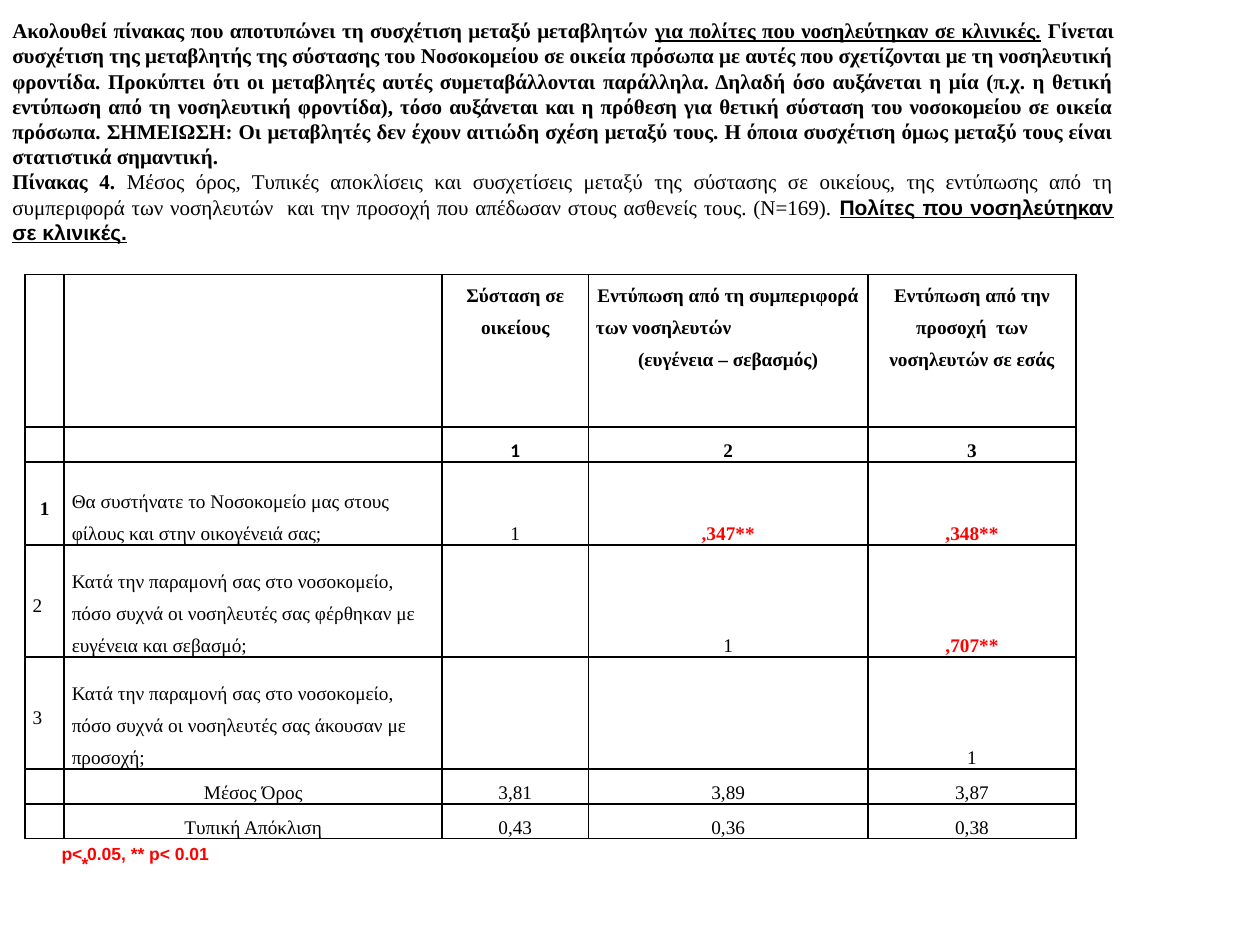
from lxml import etree
from pptx import Presentation
from pptx.dml.color import RGBColor
from pptx.enum.text import MSO_ANCHOR as Anchor, MSO_AUTO_SIZE as AutoSize, PP_ALIGN as Align
from pptx.oxml.ns import qn
from pptx.util import Inches, Pt

SERIF = "Times New Roman"
SANS = "Arial"
BLACK = "000000"
RED = "FF0000"


def colour(value):
    return RGBColor.from_string(value)


class CorrelationSlide:
    table_size = 11
    cell_inset = 0.06
    line_spacing = 1.5

    def __init__(self, presentation):
        self.slide = presentation.slides.add_slide(presentation.slide_layouts[6])

    def format_run(self, run, size, font=SERIF, fill=BLACK, bold=False, underline=False):
        run.font.size = Pt(size)
        run.font.name = font
        run.font.bold = bold
        run.font.underline = underline
        run.font.color.rgb = colour(fill)

    def text(self, left, top, width, height, paragraphs, size, align=Align.LEFT,
             anchor=Anchor.TOP, wrap=True):
        box = self.slide.shapes.add_textbox(Inches(left), Inches(top), Inches(width), Inches(height))
        frame = box.text_frame
        frame.word_wrap = wrap
        frame.auto_size = AutoSize.SHAPE_TO_FIT_TEXT
        frame.vertical_anchor = anchor
        for index, runs in enumerate(paragraphs):
            paragraph = frame.add_paragraph() if index else frame.paragraphs[0]
            paragraph.alignment = align
            for content, style in runs:
                run = paragraph.add_run()
                run.text = content
                self.format_run(run, size, **style)

    def border(self, cell):
        properties = cell._tc.get_or_add_tcPr()
        for side in ("a:lnL", "a:lnR", "a:lnT", "a:lnB"):
            line = etree.SubElement(properties, qn(side), w=str(Pt(1)))
            fill = etree.SubElement(line, qn("a:solidFill"))
            etree.SubElement(fill, qn("a:srgbClr"), val=BLACK)

    def cell(self, cell, content, align, anchor, **style):
        self.border(cell)
        cell.fill.background()
        cell.margin_left = cell.margin_right = Inches(self.cell_inset)
        cell.margin_top = cell.margin_bottom = 0
        cell.vertical_anchor = anchor
        cell.text_frame.text = content
        for paragraph in cell.text_frame.paragraphs:
            paragraph.alignment = align
            if not content:
                etree.SubElement(paragraph._p, qn("a:endParaRPr"), sz=str(self.table_size * 100))
                continue
            paragraph.line_spacing = self.line_spacing
            for run in paragraph.runs:
                self.format_run(run, self.table_size, **style)

    def table(self, left, top, widths, heights, rows):
        frame = self.slide.shapes.add_table(
            len(rows), len(widths), Inches(left), Inches(top),
            Inches(sum(widths)), Inches(sum(heights)))
        table = frame.table
        table.first_row = table.horz_banding = False
        for column, width in zip(table.columns, widths):
            column.width = Inches(width)
        for row, height in zip(table.rows, heights):
            row.height = Inches(height)
        for row_index, row in enumerate(rows):
            for column_index, content in enumerate(row):
                significant = content.endswith("**")
                question = column_index == 1 and content.endswith(";")
                row_number = column_index == 0
                plain_number = row_number and row_index > 2
                anchor = Anchor.TOP if row_index == 0 else Anchor.MIDDLE if row_number else Anchor.BOTTOM
                self.cell(
                    table.cell(row_index, column_index), content,
                    Align.LEFT if question or plain_number else Align.CENTER, anchor,
                    font="Calibri" if (row_index, column_index) == (1, 2) else SERIF,
                    fill=RED if significant else BLACK,
                    bold=significant or row_index < 2 or (row_number and not plain_number))
        return table


def main():
    presentation = Presentation()
    presentation.slide_width = Inches(10)
    presentation.slide_height = Inches(7.5)
    page = CorrelationSlide(presentation)

    bold = {"bold": True}
    introduction = [
        ("Ακολουθεί πίνακας που αποτυπώνει τη συσχέτιση μεταξύ μεταβλητών ", bold),
        ("για πολίτες που νοσηλεύτηκαν σε κλινικές.", {"bold": True, "underline": True}),
        (" Γίνεται συσχέτιση της μεταβλητής της σύστασης του Νοσοκομείου σε οικεία πρόσωπα "
         "με αυτές που σχετίζονται με τη νοσηλευτική φροντίδα. Προκύπτει ότι οι μεταβλητές "
         "αυτές συμεταβάλλονται παράλληλα. Δηλαδή όσο αυξάνεται η μία (π.χ. η θετική εντύπωση "
         "από τη νοσηλευτική φροντίδα), τόσο αυξάνεται και η πρόθεση για θετική σύσταση του "
         "νοσοκομείου σε οικεία πρόσωπα. ΣΗΜΕΙΩΣΗ: Οι μεταβλητές δεν έχουν αιτιώδη σχέση "
         "μεταξύ τους. Η όποια συσχέτιση όμως μεταξύ τους είναι στατιστικά σημαντική.", bold),
    ]
    caption = [
        ("Πίνακας 4. ", bold),
        ("Μέσος όρος, Τυπικές αποκλίσεις και συσχετίσεις μεταξύ της σύστασης σε οικείους, "
         "της εντύπωσης από τη συμπεριφορά των νοσηλευτών  και την προσοχή που απέδωσαν "
         "στους ασθενείς τους. (N=169). ", {}),
        ("Πολίτες που νοσηλεύτηκαν σε κλινικές.", {"font": SANS, "bold": True, "underline": True}),
    ]
    page.text(0, 0.08, 8.94, 1.92, [introduction, caption], 12, Align.JUSTIFY, Anchor.MIDDLE)

    stay = "Κατά την παραμονή σας στο νοσοκομείο, πόσο συχνά οι νοσηλευτές σας "
    rows = [
        ["", "", "Σύσταση σε οικείους",
         "Εντύπωση από τη συμπεριφορά\nτων νοσηλευτών\n(ευγένεια – σεβασμός)",
         "Εντύπωση από την προσοχή  των νοσηλευτών σε εσάς"],
        ["", "", "1", "2", "3"],
        ["1", "Θα συστήνατε το Νοσοκομείο μας στους φίλους και στην οικογένειά σας;",
         "1", ",347**", ",348**"],
        ["2", stay + "φέρθηκαν με ευγένεια και σεβασμό;", "", "1", ",707**"],
        ["3", stay + "άκουσαν με προσοχή;", "", "", "1"],
        ["", "Μέσος Όρος", "3,81", "3,89", "3,87"],
        ["", "Τυπική Απόκλιση", "0,43", "0,36", "0,38"],
    ]
    table = page.table(0.2, 2.18, [0.31, 3, 1.16, 2.22, 1.65],
                       [1.21, 0.25, 0.66, 0.89, 0.89, 0.25, 0.25], rows)
    table.cell(0, 3).text_frame.paragraphs[1].alignment = Align.LEFT

    note = {"font": SANS, "fill": RED, "bold": True}
    page.text(0.55, 6.72, 2.11, 0.27, [[("*", note)]], 10, anchor=Anchor.MIDDLE)
    page.text(0.39, 6.64, 1.38, 0.27, [[("p< 0.05, ** p< 0.01", note)]], 10, wrap=False)
    presentation.save("out.pptx")


if __name__ == "__main__":
    main()
